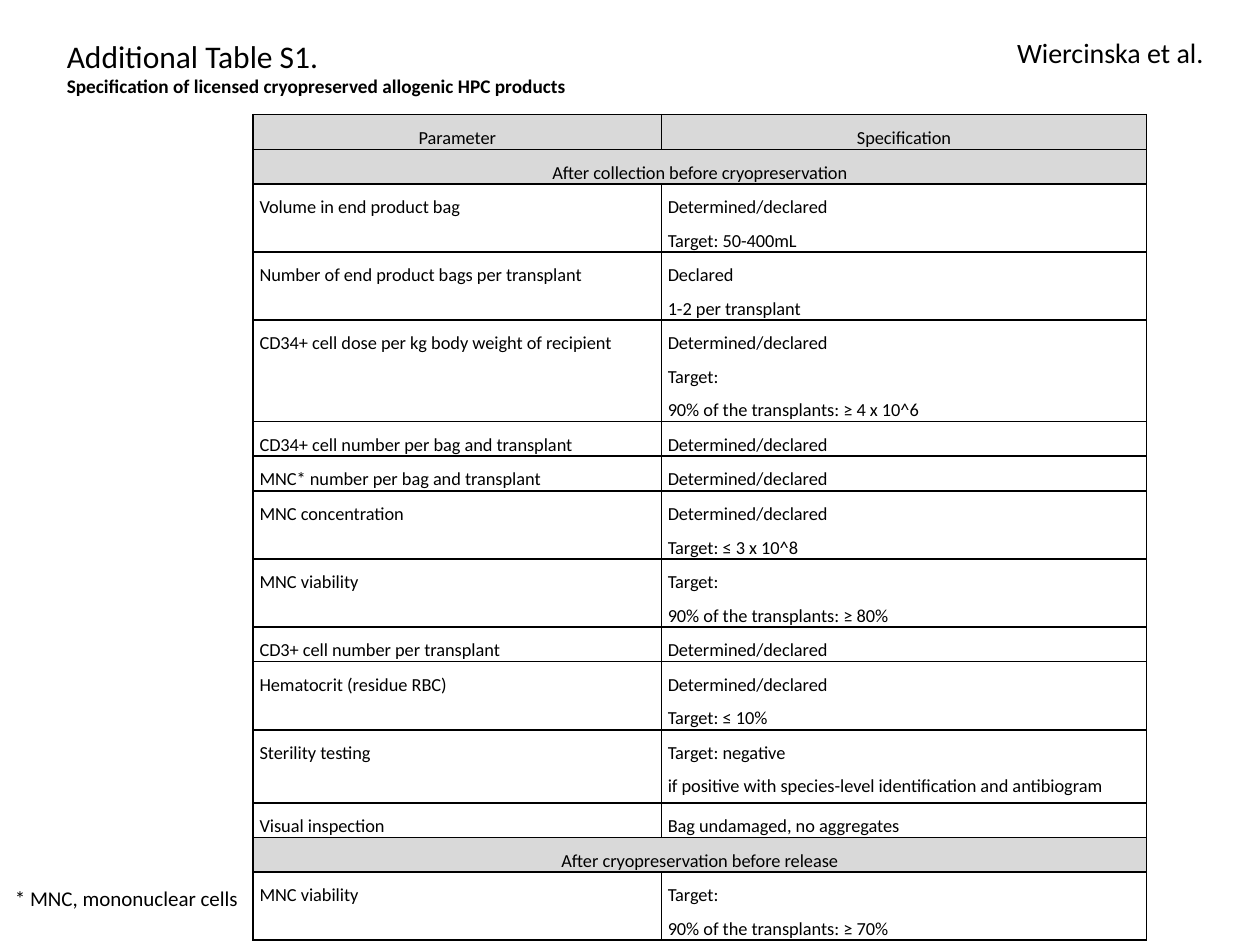
import pptx
import pptx.util
import pptx.dml.color
import pptx.enum.text
import pptx.oxml
import pptx.oxml.ns
from pptx.util import Inches, Pt

ALIGN = pptx.enum.text.PP_ALIGN
ANCHOR = pptx.enum.text.MSO_ANCHOR
COLORS = {"text": "000000", "border": "000000", "heading": "D9D9D9"}
FONT = "Calibri"

TITLE = [("Additional Table S1.", 18, False),
         ("Specification of licensed cryopreserved allogenic HPC products", 11, True)]
LABELS = [  # text, size, alignment, (left, top, width, height)
    ("* MNC, mononuclear cells", 12, ALIGN.LEFT, (0.02, 6.98, 2.83, 0.3)),
    ("Wiercinska et al.", 16, ALIGN.RIGHT, (7.6, 0.23, 2.05, 0.37)),
]
HEADER = ("Parameter", "Specification")
DECLARED = "Determined/declared"
SECTIONS = [
    ("After collection before cryopreservation", [
        ("Volume in end product bag", [DECLARED, "Target: 50-400mL"]),
        ("Number of end product bags per transplant", ["Declared", "1-2 per transplant"]),
        ("CD34+ cell dose per kg body weight of recipient",
         [DECLARED, "Target:", "90% of the transplants: ≥ 4 x 10^6"]),
        ("CD34+ cell number per bag and transplant", [DECLARED]),
        ("MNC* number per bag and transplant", [DECLARED]),
        ("MNC concentration", [DECLARED, "Target: ≤ 3 x 10^8"]),
        ("MNC viability", ["Target:", "90% of the transplants: ≥ 80%"]),
        ("CD3+ cell number per transplant", [DECLARED]),
        ("Hematocrit (residue RBC)", [DECLARED, "Target: ≤ 10%"]),
        ("Sterility testing",
         ["Target: negative", "if positive with species-level identification and antibiogram"]),
        ("Visual inspection", ["Bag undamaged, no aggregates"]),
    ]),
    ("After cryopreservation before release", [
        ("MNC viability", ["Target:", "90% of the transplants: ≥ 70%"]),
    ]),
]
COL_WIDTHS = (3.24, 3.85)
LINE_HEIGHTS = {1: 0.24, 2: 0.47, 3: 0.7}
TALL_ROWS = {"Sterility testing": 0.58}


def rgb(name):
    return pptx.dml.color.RGBColor.from_string(COLORS[name])


def style(p, size, bold=False, align=ALIGN.LEFT):
    p.alignment = align
    p.font.name, p.font.size, p.font.bold = FONT, Pt(size), bold
    p.font.color.rgb = rgb("text")


def add_borders(cell):
    """Insert the four edge lines ahead of the cell fill, as the schema requires."""
    tc_pr = cell._tc.get_or_add_tcPr()
    for i, edge in enumerate(("lnL", "lnR", "lnT", "lnB")):
        tc_pr.insert(i, pptx.oxml.parse_xml(
            f'<a:{edge} {pptx.oxml.ns.nsdecls("a")} w="{Pt(1)}"><a:solidFill>'
            f'<a:srgbClr val="{COLORS["border"]}"/></a:solidFill></a:{edge}>'))


def fill_cell(cell, lines, heading=False, space_after=0):
    cell.margin_left = cell.margin_right = Inches(0.05)
    cell.margin_top, cell.margin_bottom = Inches(0.01), 0
    cell.vertical_anchor = ANCHOR.TOP
    if heading:
        cell.fill.solid()
        cell.fill.fore_color.rgb = rgb("heading")
    else:
        cell.fill.background()
    add_borders(cell)
    tf = cell.text_frame
    tf.text = "\n".join(lines)
    for p in tf.paragraphs:
        style(p, 10.5, align=ALIGN.CENTER if heading else ALIGN.LEFT)
        p.line_spacing, p.space_after = 1.5, Pt(space_after)


def add_title(slide):
    sp = slide.shapes.title
    sp.left, sp.top, sp.width, sp.height = map(Inches, (0.43, 0.24, 8.43, 0.59))
    tf = sp.text_frame
    tf.text = "\n".join(text for text, _, _ in TITLE)
    tf.word_wrap, tf.vertical_anchor = True, ANCHOR.TOP
    tf.auto_size = pptx.enum.text.MSO_AUTO_SIZE.NONE
    for p, (_, size, bold) in zip(tf.paragraphs, TITLE):
        style(p, size, bold)
        p.line_spacing, p.space_before = 1.0, Pt(0)


def add_specification_table(slide):
    rows = [(HEADER[0], [HEADER[1]], True)]
    for section, parameters in SECTIONS:
        rows.append((section, [], True))
        rows += [(name, lines, False) for name, lines in parameters]
    heights = [TALL_ROWS.get(name, LINE_HEIGHTS[max(1, len(lines))])
               for name, lines, _ in rows]
    table = slide.shapes.add_table(
        len(rows), 2, Inches(2.01), Inches(0.91),
        Inches(sum(COL_WIDTHS)), Inches(sum(heights))).table
    table.first_row = table.horz_banding = False
    for col, width in zip(table.columns, COL_WIDTHS):
        col.width = Inches(width)
    for i, (name, lines, heading) in enumerate(rows):
        table.rows[i].height = Inches(heights[i])
        left, right = table.cell(i, 0), table.cell(i, 1)
        fill_cell(left, [name], heading, space_after=8)
        fill_cell(right, lines, heading)
        if not lines:
            left.merge(right)


def add_label(slide, text, size, align, box):
    tf = slide.shapes.add_textbox(*map(Inches, box)).text_frame
    tf.word_wrap = True
    tf.text = text
    style(tf.paragraphs[0], size, align=align)


def main():
    prs = pptx.Presentation()
    prs.slide_width, prs.slide_height = Inches(10), Inches(7.5)
    slide = prs.slides.add_slide(prs.slide_layouts.get_by_name("Title Only"))
    add_title(slide)
    add_specification_table(slide)
    for label in LABELS:
        add_label(slide, *label)
    prs.save("out.pptx")


if __name__ == "__main__":
    main()
